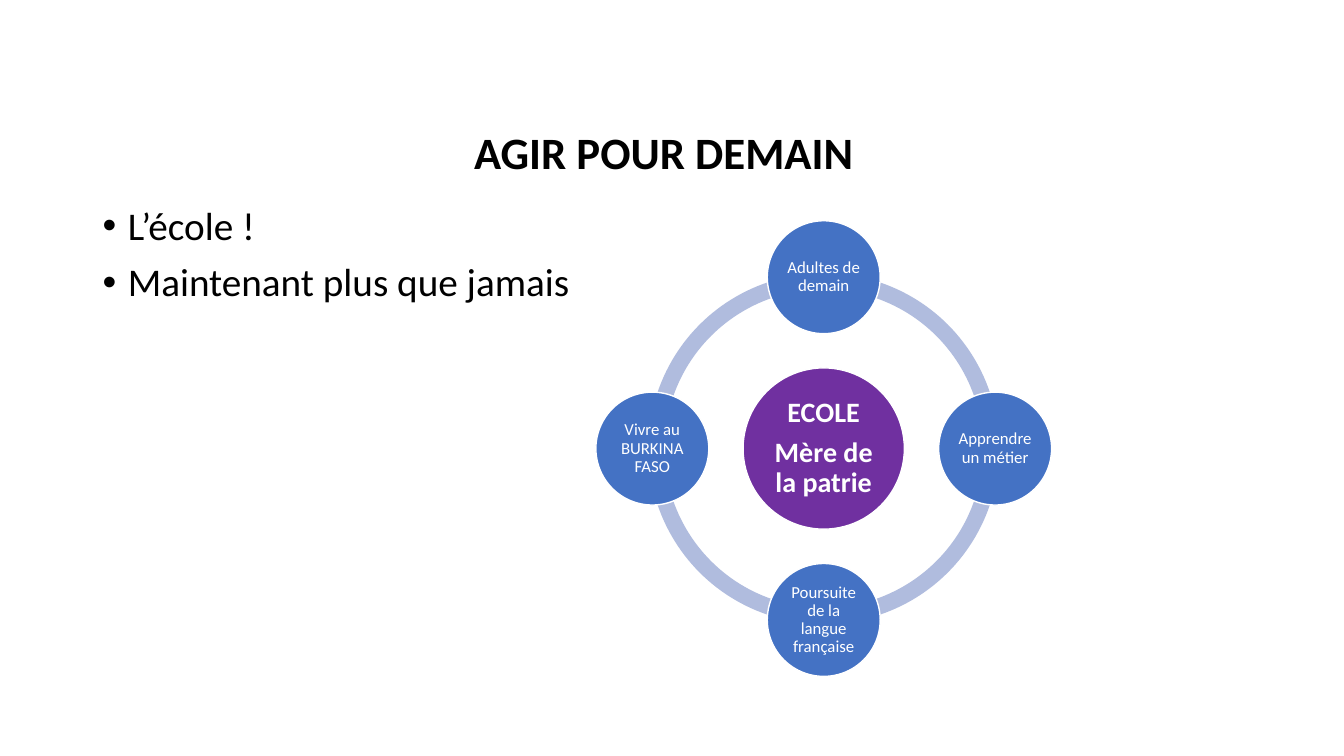
from dataclasses import dataclass
from math import cos, pi, sin

from lxml.etree import SubElement
from pptx import Presentation
from pptx.dml.color import RGBColor as RGB
from pptx.enum.shapes import MSO_SHAPE as Shape
from pptx.enum.text import MSO_ANCHOR as Anchor, PP_ALIGN as Align
from pptx.oxml.ns import qn
from pptx.util import Inches, Pt


@dataclass(frozen=True)
class Theme:
    face: str = "Calibri"
    ink: RGB = RGB(0, 0, 0)
    white: RGB = RGB(255, 255, 255)
    ring: RGB = RGB(0xB0, 0xBC, 0xDE)
    hub: RGB = RGB(0x70, 0x30, 0xA0)
    node: RGB = RGB(0x44, 0x72, 0xC4)
    title: int = 32
    body: int = 28
    core: int = 20
    label: int = 12


theme = Theme()


def style(para, size, color, bold=False):
    para.line_spacing = 0.9
    font = para.font
    font.name, font.size, font.bold = theme.face, Pt(size), bold
    font.color.rgb = color


def disc(x, y, width, fill, lines, size, inset, bold=False):
    """Draw a labelled circle centred on x, y."""
    shape = slide.shapes.add_shape(
        Shape.OVAL, Inches(x - width / 2), Inches(y - width / 2), Inches(width), Inches(width))
    shape.shadow.inherit = False
    shape.fill.solid()
    shape.fill.fore_color.rgb = fill
    shape.line.color.rgb = theme.white
    shape.line.width = Pt(1)
    frame = shape.text_frame
    frame.word_wrap = True
    frame.vertical_anchor = Anchor.MIDDLE
    frame.margin_left = frame.margin_right = Inches(inset)
    frame.margin_top = frame.margin_bottom = Inches(inset)
    frame.text = "\n".join(lines)
    for para in frame.paragraphs:
        para.alignment = Align.CENTER
        para.space_after = Pt(size * 0.35)
        style(para, size, theme.white, bold)


deck = Presentation()
deck.slide_width, deck.slide_height = Inches(13.33), Inches(7.5)
slide = deck.slides.add_slide(deck.slide_layouts[6])

# Title
title = slide.shapes.add_textbox(Inches(0.92), Inches(0.4), Inches(11.5), Inches(1.45)).text_frame
title.word_wrap = True
title.vertical_anchor = Anchor.BOTTOM
title.margin_right, title.margin_bottom = Inches(0.27), Inches(0.07)
title.text = "AGIR POUR DEMAIN"
title.paragraphs[0].alignment = Align.CENTER
style(title.paragraphs[0], theme.title, theme.ink, True)

# Bullets
body = slide.shapes.add_textbox(Inches(0.92), Inches(2), Inches(5), Inches(4.76)).text_frame
body.word_wrap = True
body.text = "L’école !\nMaintenant plus que jamais"
for i, para in enumerate(body.paragraphs):
    props = para._p.get_or_add_pPr()
    props.set("marL", str(Inches(0.25)))
    props.set("indent", str(Inches(-0.25)))
    SubElement(props, qn("a:buFont"), typeface="Arial")
    SubElement(props, qn("a:buChar"), char="•")
    para.space_before = Pt(10 if i else 0)
    style(para, theme.body, theme.ink)

# Ring of four quarter arcs; a full turn is 216 adjustment units
mid_x, mid_y = 8.17, 4.45
ring = 3.48
for start in (108, 54, 0, 162):
    arc = slide.shapes.add_shape(
        Shape.BLOCK_ARC, Inches(mid_x - ring / 2), Inches(mid_y - ring / 2),
        Inches(ring), Inches(ring))
    arc.adjustments[0] = start
    arc.adjustments[1] = (start + 54) % 216
    arc.adjustments[2] = 0.046
    arc.shadow.inherit = False
    arc.fill.solid()
    arc.fill.fore_color.rgb = theme.ring
    arc.line.fill.background()

# Hub, then nodes clockwise from the top
disc(mid_x, mid_y, 1.6, theme.hub, ["ECOLE", "Mère de la patrie"], theme.core, 0.03, True)
reach = 1.7
labels = ["Adultes de demain", "Apprendre un métier",
          "Poursuite de la langue française", "Vivre au BURKINA FASO"]
for i, label in enumerate(labels):
    turn = i * 2 * pi / len(labels)
    disc(mid_x + reach * sin(turn), mid_y - reach * cos(turn), 1.12,
         theme.node, [label], theme.label, 0.02)

deck.save("out.pptx")
